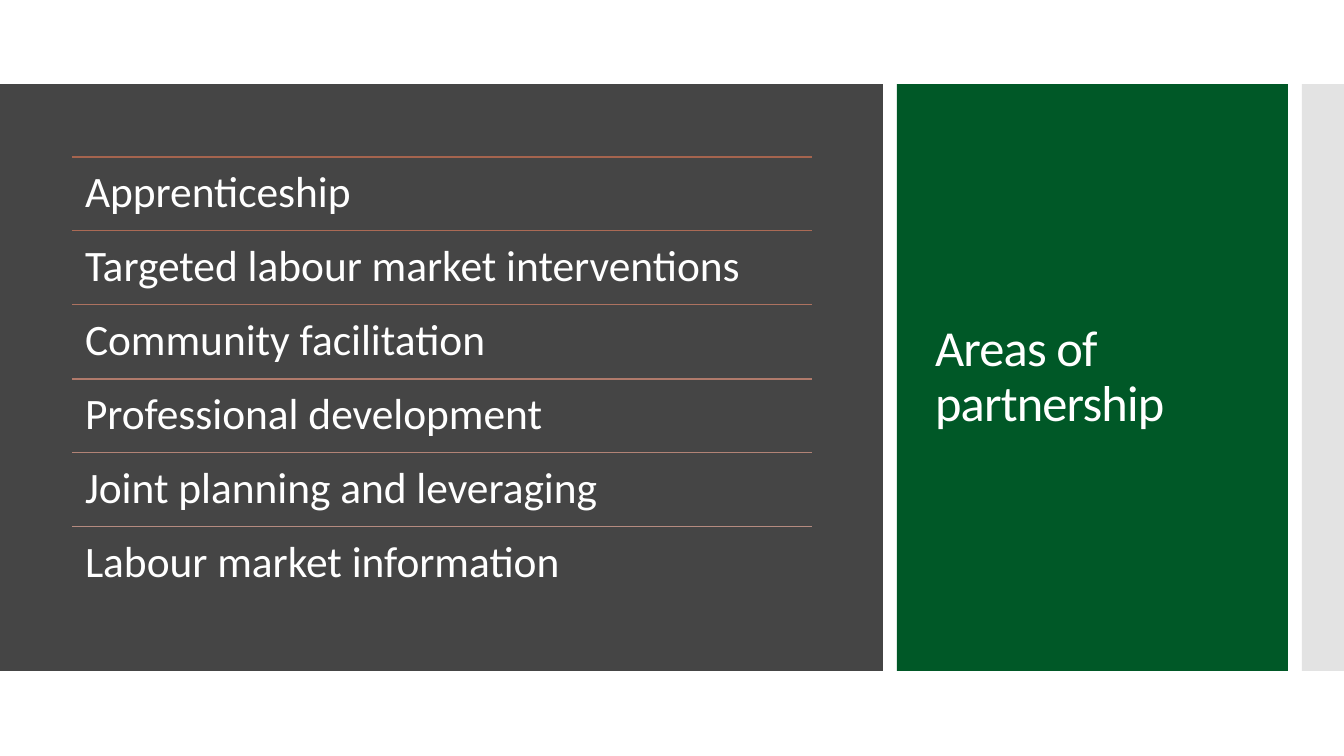
import pptx
import pptx.dml.color
import pptx.enum.shapes
import pptx.enum.text
import pptx.oxml.ns
import pptx.util
from lxml import etree

EMU_PER_PX = 12192000 / 1344
FONT = "Calibri"
WHITE = "FFFFFF"
GREEN = "005827"
CHARCOAL = "454545"
SILVER = "C8C8C8"

PANEL_TOP, PANEL_HEIGHT = 84, 587
ROW_LEFT, ROW_TOP, ROW_WIDTH, ROW_HEIGHT = 72, 157, 740, 74
ROW_INSET = 13

AREAS = [
    ("Apprenticeship", "A5644E"),
    ("Targeted labour market interventions", "AB6A55"),
    ("Community facilitation", "AD7260"),
    ("Professional development", "B07A6B"),
    ("Joint planning and leveraging", "B28376"),
    ("Labour market information", "B58B80"),
]


def px(length):
    return pptx.util.Emu(round(length * EMU_PER_PX))


def rgb(hex_code):
    return pptx.dml.color.RGBColor.from_string(hex_code)


def add_panel(slide, left, width, colour, opacity=100):
    panel = slide.shapes.add_shape(
        pptx.enum.shapes.MSO_SHAPE.RECTANGLE,
        px(left), px(PANEL_TOP), px(width), px(PANEL_HEIGHT))
    panel.shadow.inherit = False
    panel.line.fill.background()
    panel.fill.solid()
    panel.fill.fore_color.rgb = rgb(colour)
    if opacity < 100:
        tint = panel.element.spPr.find(".//" + pptx.oxml.ns.qn("a:srgbClr"))
        etree.SubElement(tint, pptx.oxml.ns.qn("a:alpha"), val=str(opacity * 1000))


def write_text(frame, words, size, anchor, insets):
    """Fill a text frame with one white, left-aligned paragraph."""
    frame_format = {
        "word_wrap": True,
        "auto_size": pptx.enum.text.MSO_AUTO_SIZE.NONE,
        "vertical_anchor": anchor,
        **insets,
    }
    for name, value in frame_format.items():
        setattr(frame, name, value)
    paragraph = frame.paragraphs[0]
    paragraph.alignment = pptx.enum.text.PP_ALIGN.LEFT
    paragraph.line_spacing = 0.9
    run = paragraph.add_run()
    run.text = words
    for name, value in {"name": FONT, "size": pptx.util.Pt(size)}.items():
        setattr(run.font, name, value)
    run.font.color.rgb = rgb(WHITE)
    return run


def add_heading(slide, words):
    heading = slide.shapes.title
    place = {"left": 925, "top": 124, "width": 325, "height": 507}
    for name, value in place.items():
        setattr(heading, name, px(value))
    run = write_text(heading.text_frame, words, 36,
                     pptx.enum.text.MSO_ANCHOR.MIDDLE, {})
    run.font.element.set("spc", "-60") if hasattr(run.font, "element") else \
        run.text and run._r.get_or_add_rPr().set("spc", "-60")
    # The title must lie in front of the green panel.
    heading.element.getparent().append(heading.element)


def add_rule(slide, top, colour):
    rule = slide.shapes.add_connector(
        pptx.enum.shapes.MSO_CONNECTOR.STRAIGHT,
        px(ROW_LEFT), px(top), px(ROW_LEFT + ROW_WIDTH), px(top))
    rule.line.width = pptx.util.Pt(0.75)
    rule.line.color.rgb = rgb(colour)
    etree.SubElement(rule.element.spPr, pptx.oxml.ns.qn("a:effectLst"))


def add_area(slide, top, words, rule_colour):
    add_rule(slide, top, rule_colour)
    area = slide.shapes.add_textbox(
        px(ROW_LEFT), px(top), px(ROW_WIDTH), px(ROW_HEIGHT))
    insets = {f"margin_{side}": px(ROW_INSET)
              for side in ("left", "top", "right", "bottom")}
    write_text(area.text_frame, words, 31, pptx.enum.text.MSO_ANCHOR.TOP, insets)


def main():
    deck = pptx.Presentation()
    deck.slide_width, deck.slide_height = px(1344), px(756)
    slide = deck.slides.add_slide(deck.slide_layouts.get_by_name("Title Only"))
    slide.background.fill.solid()
    slide.background.fill.fore_color.rgb = rgb(WHITE)

    add_panel(slide, 0, 883, CHARCOAL)
    add_panel(slide, 897, 391, GREEN)
    add_heading(slide, "Areas of partnership")
    add_panel(slide, 1302, 42, SILVER, opacity=50)
    for index, (words, rule_colour) in enumerate(AREAS):
        add_area(slide, ROW_TOP + index * ROW_HEIGHT, words, rule_colour)

    deck.save("out.pptx")


if __name__ == "__main__":
    main()
